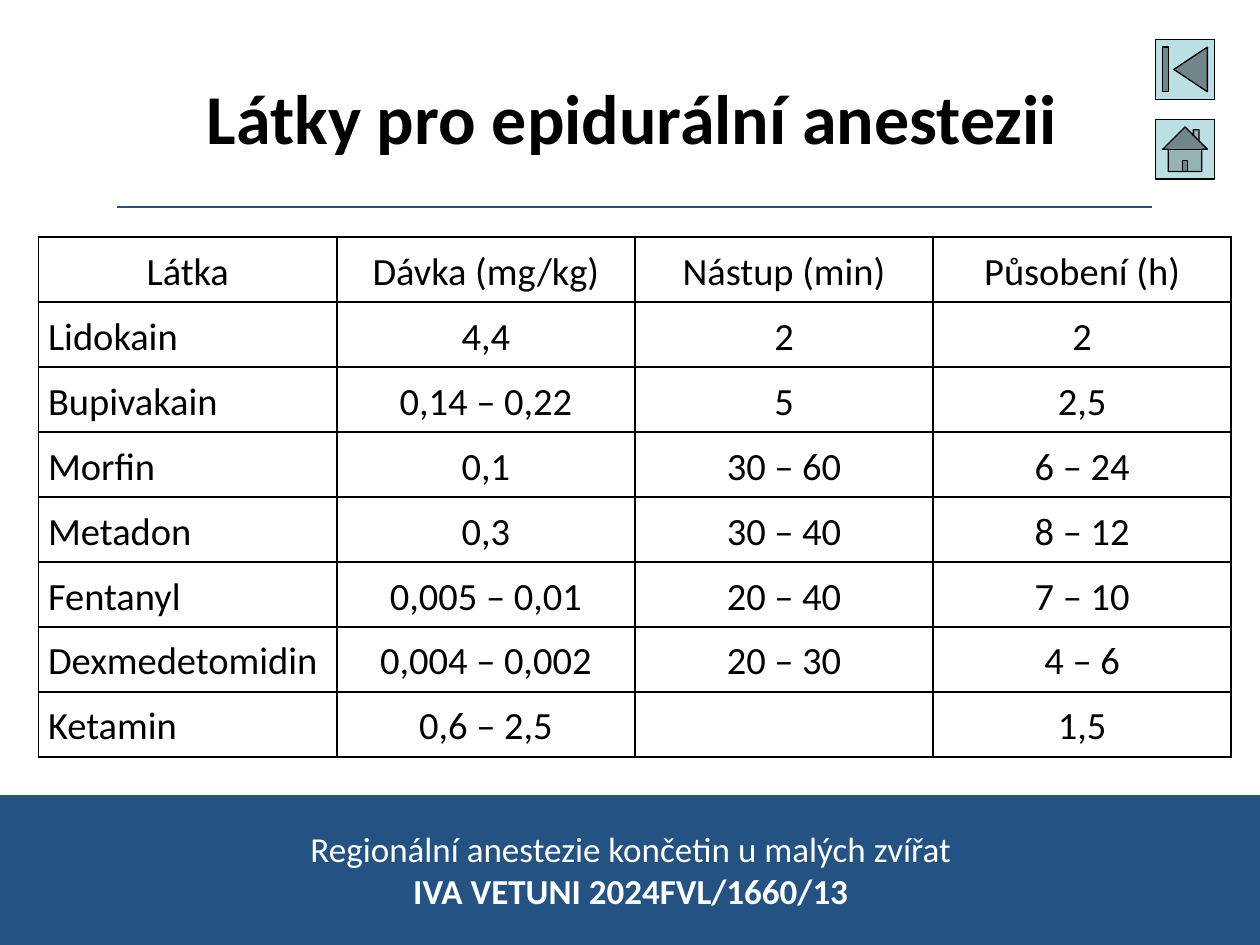
import pptx
import pptx.util
import pptx.dml.color
import pptx.enum.shapes
import pptx.enum.text
import pptx.oxml
import pptx.oxml.ns
from dataclasses import dataclass

Cm, Pt = pptx.util.Cm, pptx.util.Pt
SHAPE = pptx.enum.shapes.MSO_SHAPE
ALIGN = pptx.enum.text.PP_ALIGN
MIDDLE = pptx.enum.text.MSO_ANCHOR.MIDDLE
NS = pptx.oxml.ns.nsdecls("a")


@dataclass(frozen=True)
class Theme:
    font: str = "Calibri"
    navy: str = "235283"
    aqua: str = "BBE0E3"
    black: str = "000000"
    white: str = "FFFFFF"
    head: int = 40
    cell: int = 22
    foot: int = 20
    thin: float = 0.75


THEME = Theme()

ROWS = [
    ("Látka", "Dávka (mg/kg)", "Nástup (min)", "Působení (h)"),
    ("Lidokain", "4,4", "2", "2"),
    ("Bupivakain", "0,14 – 0,22", "5", "2,5"),
    ("Morfin", "0,1", "30 – 60", "6 – 24"),
    ("Metadon", "0,3", "30 – 40", "8 – 12"),
    ("Fentanyl", "0,005 – 0,01", "20 – 40", "7 – 10"),
    ("Dexmedetomidin", "0,004 – 0,002", "20 – 30", "4 – 6"),
    ("Ketamin", "0,6 – 2,5", "", "1,5"),
]


def rgb(code):
    return pptx.dml.color.RGBColor.from_string(code)


def format(item, values):
    for name, value in values.items():
        setattr(item, name, value)


def write(para, text, size, color, bold=False, align=ALIGN.CENTER):
    para.alignment = align
    run = para.add_run()
    run.text = text
    format(run.font, {"name": THEME.font, "size": Pt(size), "bold": bold})
    run.font.color.rgb = rgb(color)
    return run


def add_title(slide, text):
    title = slide.shapes.title
    format(title, {"left": Cm(2.29), "top": Cm(0.76),
                   "width": Cm(20.9), "height": Cm(3.18)})
    format(title.text_frame, {"vertical_anchor": MIDDLE, "word_wrap": True})
    write(title.text_frame.paragraphs[0], text, THEME.head, THEME.black, True)


def add_shape(slide, kind, box, fill, line):
    shape = slide.shapes.add_shape(kind, *map(Cm, box))
    shape.shadow.inherit = False
    shape.fill.solid()
    shape.fill.fore_color.rgb = rgb(fill)
    shape.line.color.rgb = rgb(line)
    shape.line.width = Pt(THEME.thin)


def add_rule(slide, left, right, top):
    rule = slide.shapes.add_connector(
        pptx.enum.shapes.MSO_CONNECTOR.STRAIGHT,
        Cm(left), Cm(top), Cm(right), Cm(top))
    rule.line.color.rgb = rgb(THEME.navy)
    rule.line.width = Pt(THEME.thin)
    rule._element.spPr.append(pptx.oxml.parse_xml(f"<a:effectLst {NS}/>"))


def cast_shadow(run):
    """Put a hard black shadow behind the letters of a run."""
    fill = run.font._element.find(pptx.oxml.ns.qn("a:solidFill"))
    fill.addnext(pptx.oxml.parse_xml(
        f'<a:effectLst {NS}><a:outerShdw dist="38100" dir="2700000">'
        f'<a:srgbClr val="{THEME.black}"/></a:outerShdw></a:effectLst>'))


def add_footer(slide, lines):
    add_shape(slide, SHAPE.RECTANGLE, (0, 16.05, 25.4, 3), THEME.navy, THEME.navy)
    box = slide.shapes.add_textbox(Cm(5.94), Cm(16.56), Cm(13.56), Cm(1.96))
    frame = box.text_frame
    frame.word_wrap = False
    for spot, (text, bold) in enumerate(lines):
        para = frame.add_paragraph() if spot else frame.paragraphs[0]
        cast_shadow(write(para, text, THEME.foot, THEME.white, bold))


def style_cell(cell):
    format(cell, {"vertical_anchor": MIDDLE, "margin_left": Cm(0.19),
                  "margin_right": Cm(0.19), "margin_top": 0, "margin_bottom": 0})
    props = cell._tc.get_or_add_tcPr()
    for side in "LRTB":
        props.append(pptx.oxml.parse_xml(
            f'<a:ln{side} {NS} w="{Pt(1)}"><a:solidFill>'
            f'<a:srgbClr val="{THEME.black}"/></a:solidFill></a:ln{side}>'))
    cell.fill.solid()
    cell.fill.fore_color.rgb = rgb(THEME.white)


def add_table(slide, rows):
    wide, high = 6.01, 1.31
    count = len(rows[0])
    table = slide.shapes.add_table(
        len(rows), count, Cm(0.78), Cm(4.78),
        Cm(wide * count), Cm(high * len(rows))).table
    format(table, {"first_row": False, "horz_banding": False})
    for y, row in enumerate(rows):
        for x, text in enumerate(row):
            cell = table.cell(y, x)
            style_cell(cell)
            if text:
                para = cell.text_frame.paragraphs[0]
                para.line_spacing = 1.1
                align = ALIGN.JUSTIFY if y and not x else ALIGN.CENTER
                write(para, text, THEME.cell, THEME.black, align=align)


def main():
    deck = pptx.Presentation()
    format(deck, {"slide_width": Cm(25.4), "slide_height": Cm(19.05)})
    slide = deck.slides.add_slide(deck.slide_layouts.get_by_name("Title Only"))
    add_footer(slide, [("Regionální anestezie končetin u malých zvířat", False),
                       ("IVA VETUNI 2024FVL/1660/13", True)])
    add_rule(slide, 2.36, 23.22, 4.17)
    add_title(slide, "Látky pro epidurální anestezii")
    buttons = (SHAPE.ACTION_BUTTON_BEGINNING, SHAPE.ACTION_BUTTON_HOME)
    for spot, kind in enumerate(buttons):
        add_shape(slide, kind, (23.29, 0.8 + 1.61 * spot, 1.2, 1.2),
                  THEME.aqua, THEME.black)
    add_table(slide, ROWS)
    deck.save("out.pptx")


if __name__ == "__main__":
    main()
